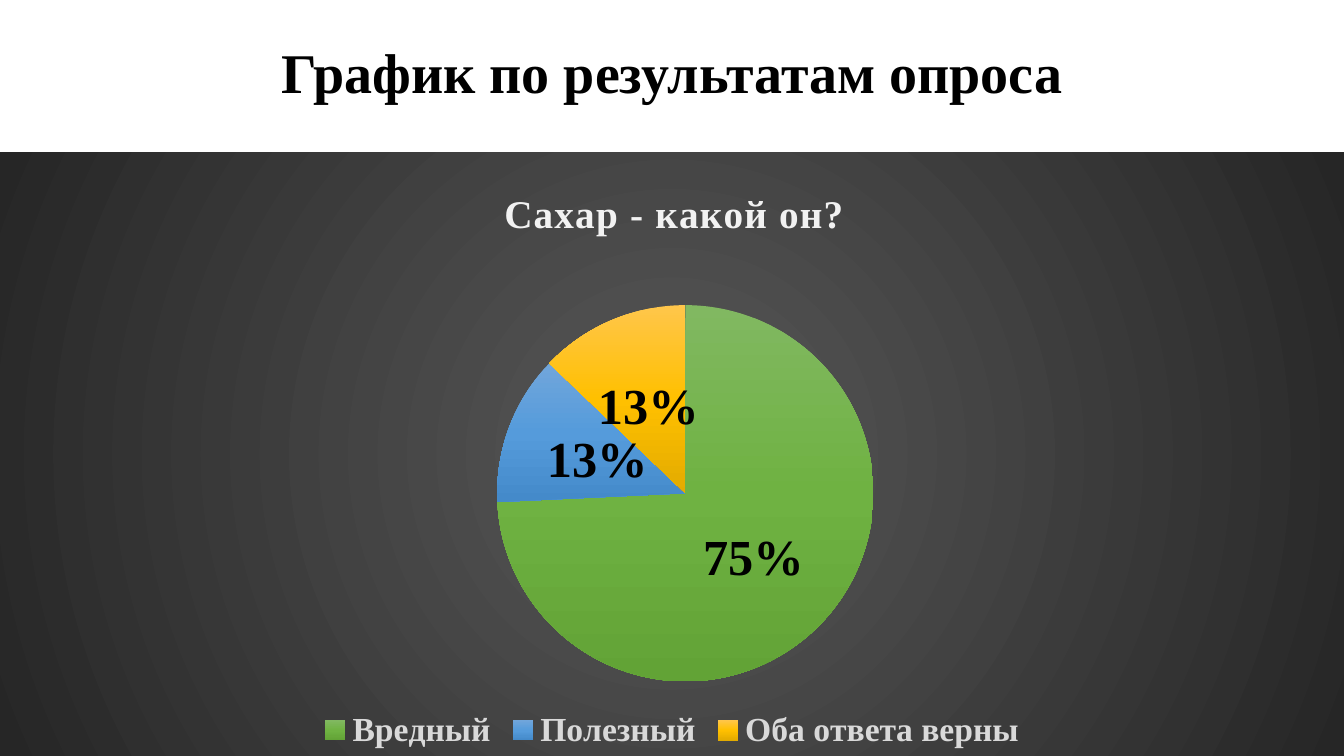
"""Build a slide with a pie chart of the survey results."""
from lxml import etree
from pptx import Presentation
from pptx.chart.data import CategoryChartData
from pptx.dml.color import RGBColor
from pptx.enum.chart import XL_CHART_TYPE as ChartType
from pptx.enum.chart import XL_LABEL_POSITION as LabelPosition
from pptx.enum.chart import XL_LEGEND_POSITION as LegendPosition
from pptx.enum.text import MSO_ANCHOR, PP_ALIGN
from pptx.oxml import parse_xml
from pptx.oxml.ns import nsdecls, qn
from pptx.util import Pt

HEADING = "График по результатам опроса"
QUESTION = "Сахар - какой он?"
ANSWERS = [
    ("Вредный", 75, ("81B861", "6FB242", "62A336")),
    ("Полезный", 13, ("71A6DB", "559BDB", "448ACA")),
    ("Оба ответа верны", 13, ("FFC64B", "FFC000", "E3AB00")),
]
BACKDROP = ("595959", "262626")
SERIF = "Times New Roman"
WIDTH, HEIGHT, CHART_TOP = 960, 540, 108.7


def style(font, size, color, name=SERIF, bold=True):
    font.size, font.name, font.bold = Pt(size), name, bold
    font.color.rgb = RGBColor.from_string(color)


def gradient(colors, direction):
    step = 100000 // (len(colors) - 1)
    stops = "".join(f'<a:gs pos="{i * step}"><a:srgbClr val="{color}"/></a:gs>'
                    for i, color in enumerate(colors))
    return parse_xml(f'<a:gradFill {nsdecls("a")} rotWithShape="1">'
                     f'<a:gsLst>{stops}</a:gsLst>{direction}</a:gradFill>')


def layout(target="", **fractions):
    modes = "".join(f'<c:{key}Mode val="edge"/>' for key in "xy")
    places = "".join(f'<c:{key} val="{value}"/>' for key, value in fractions.items())
    return parse_xml(f'<c:layout {nsdecls("c")}><c:manualLayout>'
                     f'{target}{modes}{places}</c:manualLayout></c:layout>')


deck = Presentation()
deck.slide_width, deck.slide_height = Pt(WIDTH), Pt(HEIGHT)
slide = deck.slides.add_slide(deck.slide_layouts[5])

survey = CategoryChartData()
survey.categories = [answer for answer, _, _ in ANSWERS]
survey.add_series("Series 1", [share for _, share, _ in ANSWERS])
chart = slide.shapes.add_chart(ChartType.PIE, 0, Pt(CHART_TOP), Pt(WIDTH),
                               Pt(HEIGHT - CHART_TOP), survey).chart
style(chart.font, 10, "000000", "Calibri", False)

chart.has_title = True
chart.chart_title.text_frame.text = QUESTION
question = chart.chart_title.text_frame.paragraphs[0].runs[0]
style(question.font, 28, "F2F2F2")
question.font._element.set("spc", "100")

chart.has_legend = True
chart.legend.position = LegendPosition.BOTTOM
chart.legend.include_in_layout = False
style(chart.legend.font, 24, "D9D9D9")

pie = chart.plots[0]
pie.vary_by_categories = True
pie.has_data_labels = True
labels = pie.data_labels
labels.show_value, labels.show_percentage = True, False
labels.number_format, labels.number_format_is_linked = '0"%"', False
labels.position = LabelPosition.CENTER
style(labels.font, 36, "000000")

space = chart._chartSpace
for index, (_, _, shades) in enumerate(ANSWERS):
    slice_format = pie.series[0].points[index].format
    slice_format.fill.solid()
    slice_format.line.fill.background()
    solid = space.xpath(".//c:dPt/c:spPr/a:solidFill")[0]
    solid.getparent().replace(solid, gradient(shades, '<a:lin ang="5400000" scaled="0"/>'))

backdrop = parse_xml(f'<c:spPr {nsdecls("c", "a")}><a:ln><a:noFill/></a:ln></c:spPr>')
backdrop.insert(0, gradient(BACKDROP, '<a:path path="circle"><a:fillToRect l="50000" '
                                      't="50000" r="50000" b="50000"/></a:path>'))
space.find(qn("c:chart")).addnext(backdrop)

for part in space.xpath(".//c:title/c:layout | .//c:plotArea/c:layout"):
    part.getparent().remove(part)
space.xpath(".//c:title/c:tx")[0].addnext(layout(x=0.37, y=0.05))
inner = '<c:layoutTarget val="inner"/>'
space.xpath(".//c:plotArea")[0].insert(0, layout(inner, x=0.37, y=0.25, w=0.28, h=0.63))

heading = slide.shapes.title
heading.left, heading.top, heading.width, heading.height = Pt(66), Pt(1.5), Pt(828), Pt(104.4)
heading.text_frame.text = HEADING
heading.text_frame.vertical_anchor = MSO_ANCHOR.MIDDLE
line = heading.text_frame.paragraphs[0]
line.alignment, line.line_spacing = PP_ALIGN.CENTER, 0.9
style(line.runs[0].font, 40, "000000")

deck.save("out.pptx")
